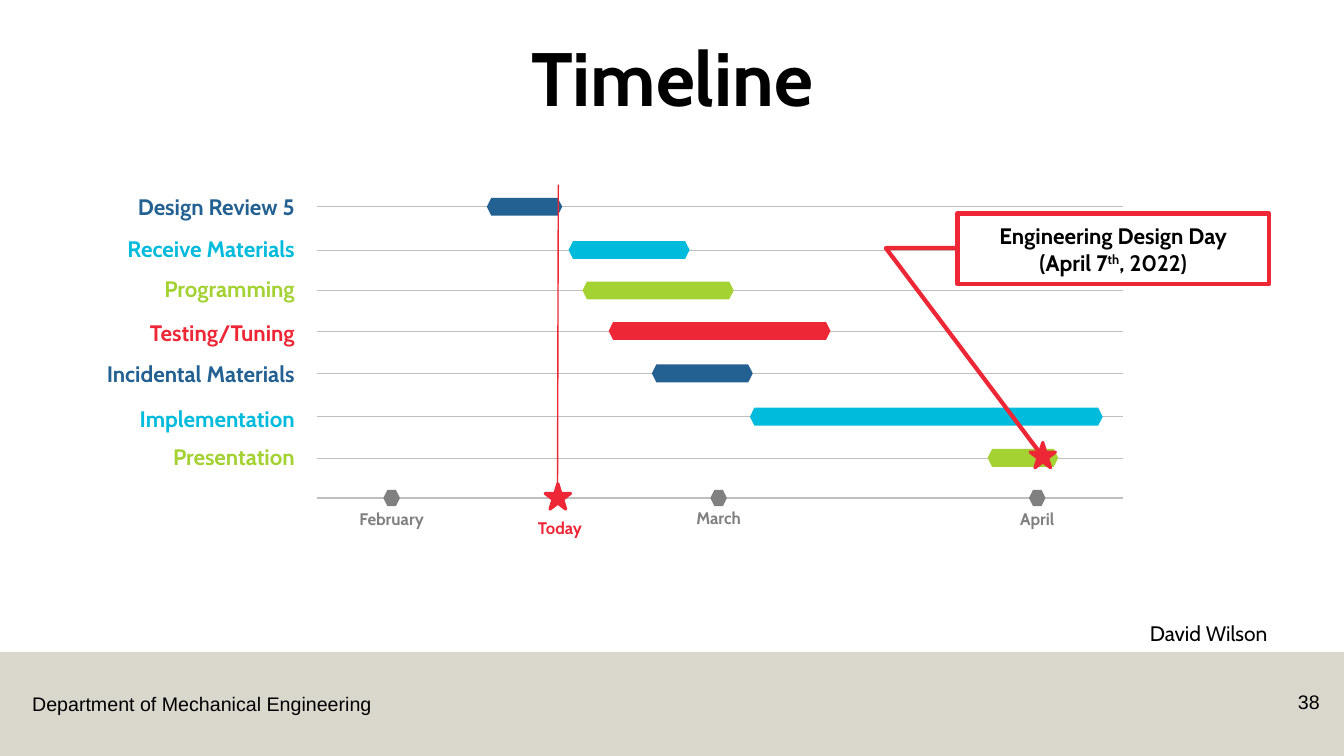
from lxml.etree import SubElement
from pptx import Presentation
from pptx.dml.color import RGBColor
from pptx.enum.shapes import MSO_CONNECTOR, MSO_SHAPE as SHAPE
from pptx.enum.text import MSO_ANCHOR as ANCHOR, PP_ALIGN as ALIGN
from pptx.oxml.ns import qn
from pptx.util import Cm, Pt

NAVY, CYAN, LIME, RED = "236192", "00BBDC", "A4D233", "EE2737"
GRAY, RULE, BLACK, WHITE, SAND = "808080", "BFBFBF", "000000", "FFFFFF", "B7B09C"
AXIS_LEFT, AXIS_RIGHT, AXIS_Y = 7.98, 28.3, 12.55
BAR_H, MARKER, STAR = 0.45, 0.38, 0.64

prs = Presentation()
prs.slide_width, prs.slide_height = Cm(33.87), Cm(19.05)
s = prs.slides.add_slide(prs.slide_layouts[6])


def rgb(color):
    return RGBColor.from_string(color)


def add(text="", at=(), shape=None, fill=None, line=None, weight=1, size=16, color=BLACK,
        font="Cabin", bold=True, align=ALIGN.CENTER, anchor=ANCHOR.TOP, wrap=True, spacing=None):
    """Add a shape, a text box (no shape) or a line (shape "line"); ^ marks toggle superscript."""
    box = [Cm(v) for v in at]
    if shape == "line":
        sp = s.shapes.add_connector(MSO_CONNECTOR.STRAIGHT, *box)
        SubElement(sp._element.spPr, qn("a:effectLst"))
    elif shape is None:
        sp = s.shapes.add_textbox(*box)
    else:
        sp = s.shapes.add_shape(shape, *box)
        sp.shadow.inherit = False
        sp.fill.solid()
        sp.fill.fore_color.rgb = rgb(fill)
    if line:
        sp.line.color.rgb = rgb(line)
        sp.line.width = Pt(weight)
    elif shape is not None:
        sp.line.fill.background()
    if text:
        tf = sp.text_frame
        tf.word_wrap, tf.vertical_anchor = wrap, anchor
        for i, words in enumerate(text.split("\n")):
            p = tf.add_paragraph() if i else tf.paragraphs[0]
            p.alignment, p.line_spacing = align, spacing
            for j, part in enumerate(words.split("^")):
                r = p.add_run()
                r.text = part
                r.font.name, r.font.size, r.font.bold = font, Pt(size), bold
                r.font.color.rgb = rgb(color)
                if j % 2:
                    r._r.get_or_add_rPr().set("baseline", "30000")
    return sp


# Footer and title
band = add(at=(0, 16.43, 33.87, 2.62), shape=SHAPE.RECTANGLE, fill=SAND)
SubElement(band._element.spPr.find(qn("a:solidFill"))[0], qn("a:alpha")).set("val", "50000")
add("Department of Mechanical Engineering", (0.56, 17.32, 9.12, 0.86), size=14, font="Arial",
    bold=False, align=ALIGN.LEFT, wrap=False)
add("38", (31.55, 17.25, 1.96, 1.02), size=14, font="Arial", bold=False, align=ALIGN.RIGHT)
add("David Wilson", (28.73, 15.52, 7.62, 0.89), size=15, bold=False, align=ALIGN.LEFT)
add("Timeline", (2.34, 1.12, 29.21, 1.88), size=54, anchor=ANCHOR.MIDDLE, spacing=0.9)

# Month axis: name, marker centre, label top
add(at=(AXIS_LEFT, AXIS_Y, AXIS_RIGHT, AXIS_Y), shape="line", line=RULE)
for month, x, top in [("February", 9.87, 12.7), ("March", 18.11, 12.67), ("April", 26.14, 12.7)]:
    add(at=(x - MARKER / 2, AXIS_Y - MARKER / 2, MARKER, MARKER), shape=SHAPE.HEXAGON,
        fill=GRAY, line=GRAY)
    add(month, (x - 1.79, top, 3.58, 0.76), size=12, color=GRAY)

# Tasks: name, colour, label top, row centre, bar start, bar length
tasks = [
    ("Design Review 5", NAVY, 4.75, 5.21, 12.27, 1.9),
    ("Receive Materials", CYAN, 5.79, 6.3, 14.33, 3.05),
    ("Programming", LIME, 6.81, 7.32, 14.68, 3.81),
    ("Testing/Tuning", RED, 7.92, 8.34, 15.34, 5.59),
    ("Incidental Materials", NAVY, 8.94, 9.41, 16.43, 2.54),
    ("Implementation", CYAN, 10.08, 10.5, 18.9, 8.89),
    ("Presentation", LIME, 11.05, 11.54, 24.89, 1.78),
]
for name, color, top, y, start, length in tasks:
    add(name, (0.06, top, 7.62, 0.94), color=color, align=ALIGN.RIGHT)
    add(at=(AXIS_LEFT, y, AXIS_RIGHT, y), shape="line", line=RULE, weight=0.5)
    add(at=(start, y - BAR_H / 2, length, BAR_H), shape=SHAPE.HEXAGON, fill=color)

# Design day and today
for left, top in [(25.96, 11.15), (13.74, 12.19)]:
    add(at=(left, top, STAR, STAR), shape=SHAPE.STAR_5_POINT, fill=RED, line=RED, weight=2.25)
callout = add("Engineering Design Day\n(April 7^th^, 2022)", (24.13, 5.38, 7.85, 1.78),
              shape=SHAPE.LINE_CALLOUT_2, fill=WHITE, line=RED, weight=3, anchor=ANCHOR.MIDDLE)
for i, value in enumerate([0.49, 0, 0.49, -0.23, 3.42, 0.27]):
    callout.adjustments[i] = value
add(at=(14.07, 4.65, 14.05, 12.29), shape="line", line=RED)
add("Today", (12.42, 12.93, 3.38, 0.76), size=12, color=RED)

prs.save("out.pptx")
